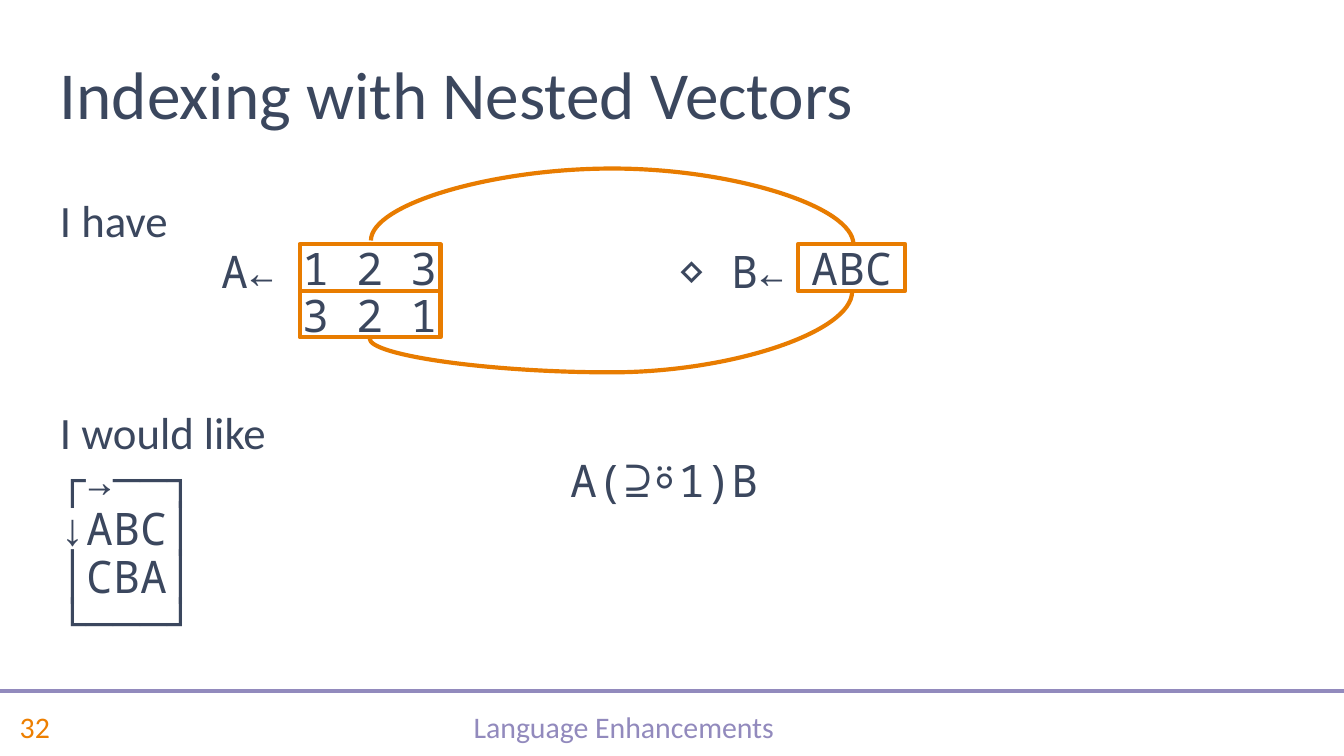
import pptx
import pptx.dml.color
import pptx.enum.shapes
import pptx.enum.text
import pptx.util
from lxml import etree
from pptx.oxml.ns import qn

Pt = pptx.util.Pt
ANCHOR = pptx.enum.text.MSO_ANCHOR
ALIGN = pptx.enum.text.PP_ALIGN


class Theme:
    ink, orange, number, purple, white = "3B475E", "E87C00", "ED7F00", "928ABD", "FFFFFF"
    prose, code = "Calibri", "Noto Sans Mono"
    title_size, body_size, footer_size = 36, 24, 16
    code_pitch, line_width = 25.7, 2.25


# Content
TITLE = "Indexing with Nested Vectors"
FOOTER = "Language Enhancements"
PAGE_NUMBER = "32"
# text, font, space before, tab stops counted in code columns
BODY = [
    ("I have", Theme.prose, 0, ()),
    ("\tA←\t⋄ B←", Theme.code, 2, (6, 23)),
    ("I would like", Theme.prose, 57, ()),
    ("┌→──┐\tA(⊇⍤1)B", Theme.code, 0, (19,)),
    ("↓ABC│", Theme.code, 0, ()),
    ("│CBA│", Theme.code, 0, ()),
    ("└───┘", Theme.code, 0, ()),
]
# text, left, row, width, fill
BOXES = [
    ("1 2 3", 160.5, 0, 75.5, None),
    ("3 2 1", 160.5, 1, 75.5, Theme.white),
    ("ABC", 427.5, 0, 57.5, None),
]
BOX_TOP, BOX_HEIGHT = 130.8, 25
# start, end, height of the bend
CURVES = [
    ((456.5, 156.2), (198, 181.4), 199.5),
    ((457.2, 131), (198.7, 128.9), 90.3),
]

presentation = pptx.Presentation()
presentation.slide_width, presentation.slide_height = Pt(720), Pt(405)
slide = presentation.slides.add_slide(presentation.slide_layouts[6])


def color(value):
    return pptx.dml.color.RGBColor.from_string(value)


def style(paragraph, size, ink, font=Theme.prose):
    for run in paragraph.runs:
        run.font.size, run.font.name = Pt(size), font
        run.font.color.rgb = color(ink)


def add_text_box(left, top, width, height, anchor):
    frame = slide.shapes.add_textbox(Pt(left), Pt(top), Pt(width), Pt(height)).text_frame
    frame.word_wrap, frame.vertical_anchor = True, anchor
    return frame


def add_label(text, place, size, ink, anchor=ANCHOR.MIDDLE, align=ALIGN.LEFT):
    frame = add_text_box(*place, anchor)
    frame.text = text
    frame.paragraphs[0].alignment = align
    style(frame.paragraphs[0], size, ink)


def set_tabs(paragraph, columns):
    column_width = 0.6 * Theme.body_size
    tab_list = etree.SubElement(paragraph._p.get_or_add_pPr(), qn("a:tabLst"))
    for column in columns:
        etree.SubElement(tab_list, qn("a:tab"), pos=str(Pt(column * column_width)), algn="l")


def draw_line(connector, ink):
    connector.line.color.rgb = color(ink)
    connector.line.width = Pt(Theme.line_width)
    etree.SubElement(connector._element.spPr, qn("a:effectLst"))


def add_curve(start, end, bend):
    # The preset runs sideways, so it is turned to leave its start vertically
    rise, run = end[1] - start[1], abs(end[0] - start[0])
    width = abs(rise)
    left = (start[0] + end[0] - width) / 2
    top = (start[1] + end[1] - run) / 2
    connector = slide.shapes.add_connector(
        pptx.enum.shapes.MSO_CONNECTOR.CURVE,
        Pt(left), Pt(top), Pt(left + width), Pt(top + run))
    properties = connector._element.spPr
    frame = properties.find(qn("a:xfrm"))
    frame.set("rot", str((90 if rise > 0 else 270) * 60000))
    if rise < 0:
        frame.set("flipV", "1")
    adjustment = round((bend - start[1]) / rise * 100000)
    guides = properties.find(qn("a:prstGeom")).find(qn("a:avLst"))
    etree.SubElement(guides, qn("a:gd"), name="adj1", fmla=f"val {adjustment}")
    draw_line(connector, Theme.orange)


# Footer
add_label(FOOTER, (56, 373.5, 556.5, 31.5), Theme.footer_size, Theme.purple, align=ALIGN.CENTER)
add_label(PAGE_NUMBER, (3.5, 373.5, 52.5, 31.5), Theme.footer_size, Theme.number)
rule = slide.shapes.add_connector(
    pptx.enum.shapes.MSO_CONNECTOR.STRAIGHT, Pt(0), Pt(370), Pt(720), Pt(370))
draw_line(rule, Theme.purple)

# Body and title
body = add_text_box(25, 99.5, 672, 284.5, ANCHOR.TOP)
body.text = "\n".join(text for text, *_ in BODY)
for paragraph, (_, font, space, columns) in zip(body.paragraphs, BODY):
    if font == Theme.code:
        paragraph.line_spacing = Pt(Theme.code_pitch)
    if space:
        paragraph.space_before = Pt(space)
    if columns:
        set_tabs(paragraph, columns)
    style(paragraph, Theme.body_size, Theme.ink, font)
add_label(TITLE, (25, 21, 551.5, 54), Theme.title_size, Theme.ink, anchor=ANCHOR.BOTTOM)

# Boxed vectors
for text, left, row, width, fill in BOXES:
    box = slide.shapes.add_shape(
        pptx.enum.shapes.MSO_SHAPE.RECTANGLE,
        Pt(left), Pt(BOX_TOP + row * BOX_HEIGHT), Pt(width), Pt(BOX_HEIGHT))
    box.shadow.inherit = False
    if fill:
        box.fill.solid()
        box.fill.fore_color.rgb = color(fill)
    else:
        box.fill.background()
    box.line.color.rgb, box.line.width = color(Theme.orange), Pt(Theme.line_width)
    frame = box.text_frame
    frame.margin_left = frame.margin_right = frame.margin_top = frame.margin_bottom = 0
    frame.vertical_anchor = ANCHOR.MIDDLE
    frame.text = text
    frame.paragraphs[0].alignment = ALIGN.CENTER
    style(frame.paragraphs[0], Theme.body_size, Theme.ink, Theme.code)

# Curves linking the boxes
for curve in CURVES:
    add_curve(*curve)

presentation.save("out.pptx")
